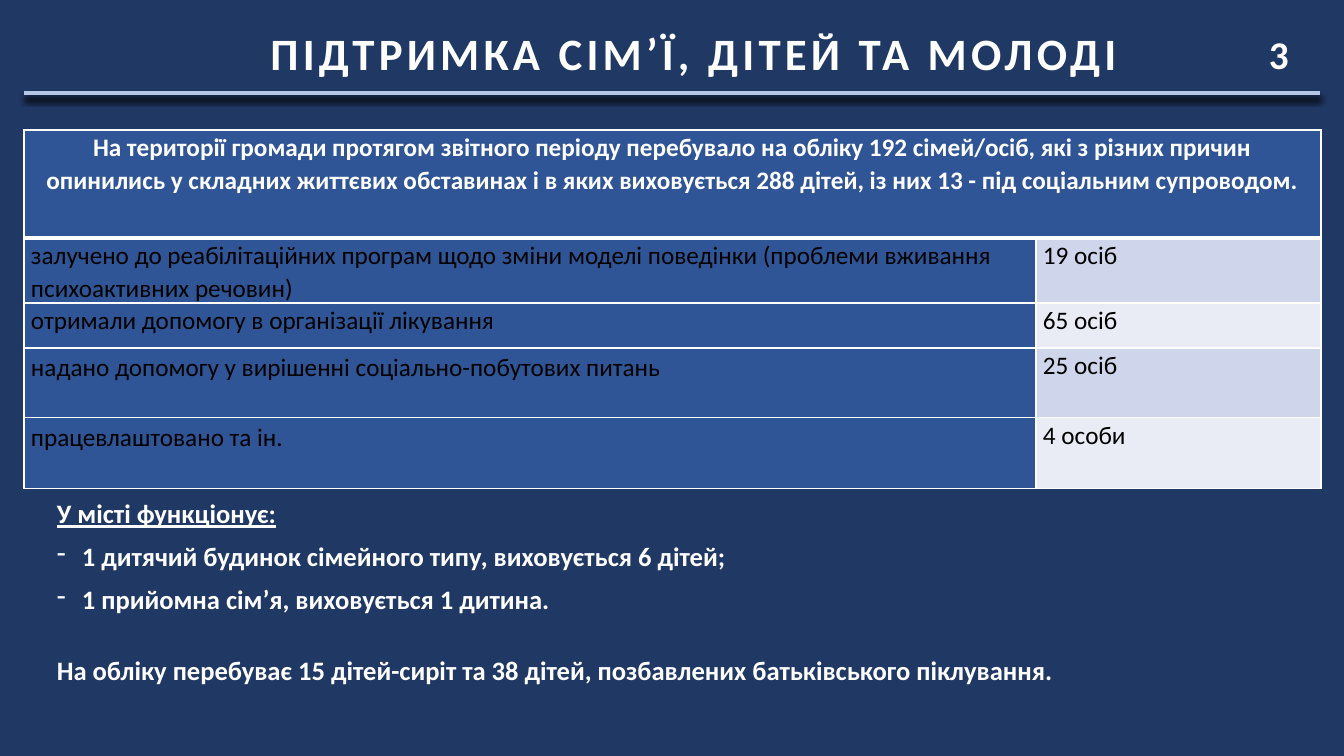
from lxml import etree
from pptx import Presentation
from pptx.dml.color import RGBColor
from pptx.enum.shapes import MSO_CONNECTOR
from pptx.enum.text import MSO_ANCHOR, MSO_AUTO_SIZE, PP_ALIGN
from pptx.oxml import parse_xml
from pptx.oxml.ns import nsdecls, qn
from pptx.util import Emu, Pt

NAVY = RGBColor(0x20, 0x38, 0x64)
BLUE = RGBColor(0x2F, 0x55, 0x97)
PALE_BLUE = RGBColor(0xB4, 0xC7, 0xE7)
BAND_DARK = RGBColor(0xCF, 0xD5, 0xEA)
BAND_LIGHT = RGBColor(0xE9, 0xEB, 0xF5)
WHITE = RGBColor(0xFF, 0xFF, 0xFF)
BLACK = RGBColor(0, 0, 0)

TITLE = "ПІДТРИМКА СІМ’Ї, ДІТЕЙ ТА МОЛОДІ"
SUMMARY = (
    "На території громади протягом звітного періоду перебувало на обліку 192 сімей/осіб, "
    "які з різних причин опинились у складних життєвих обставинах і в яких виховується "
    "288 дітей, із них 13 - під соціальним супроводом."
)
SUPPORT = [
    ("залучено до реабілітаційних програм щодо зміни моделі поведінки "
     "(проблеми вживання психоактивних речовин)", "19 осіб", 1.07),
    ("отримали допомогу в організації лікування", "65 осіб", 1.07),
    ("надано допомогу у вирішенні соціально-побутових питань", "25 осіб", 1.15),
    ("працевлаштовано та ін.", "4 особи", 1.15),
]
ROW_HEIGHTS = [108, 65, 45, 70, 71]
AMOUNT_WIDTH = 285


def px(length):
    """Turn whole pixels into EMU."""
    return Emu(round(length * 914400 / 100.8))


def shadow_effects():
    """Make a soft black shadow that falls downwards."""
    return parse_xml(
        f'<a:effectLst {nsdecls("a")}><a:outerShdw blurRad="50800" dist="50800" dir="5400000">'
        '<a:srgbClr val="000000"/></a:outerShdw></a:effectLst>')


def write(paragraph, text, size=18, color=WHITE, bold=True, underline=False, align=PP_ALIGN.LEFT,
          line=1.0, before=0, after=0, bullet=None, tracking=0, shadow=False):
    """Fill a paragraph with one formatted run."""
    paragraph.alignment = align
    paragraph.line_spacing = line
    paragraph.space_before = Pt(before)
    paragraph.space_after = Pt(after)
    if bullet:
        properties = paragraph._p.get_or_add_pPr()
        properties.set("marL", str(px(25)))
        properties.set("indent", str(-px(25)))
        etree.SubElement(properties, qn("a:buChar")).set("char", bullet)
    run = paragraph.add_run()
    run.text = text
    font = run.font
    font.name, font.size, font.bold, font.underline = "Calibri", Pt(size), bold, underline
    font.color.rgb = color
    if tracking:
        run._r.get_or_add_rPr().set("spc", str(tracking * 100))
    if shadow:
        run._r.get_or_add_rPr().find(qn("a:solidFill")).addnext(shadow_effects())


def add_header(slide, left, top, width):
    """Place the title, the page number and the rule below them."""
    title = slide.shapes.title
    title.left, title.top, title.width, title.height = px(left + 22), px(top), px(width), px(70)
    title.text_frame.auto_size = MSO_AUTO_SIZE.NONE
    title.text_frame.vertical_anchor = MSO_ANCHOR.TOP
    write(title.text_frame.paragraphs[0], TITLE, size=32, align=PP_ALIGN.CENTER,
          tracking=3, shadow=True)

    number = slide.shapes.add_textbox(px(left + width - 61), px(top + 4), px(50), px(57))
    number.text_frame.word_wrap = True
    write(number.text_frame.paragraphs[0], "3", size=28)

    rule = slide.shapes.add_connector(
        MSO_CONNECTOR.STRAIGHT, px(left), px(top + 72), px(left + width), px(top + 72))
    rule.line.color.rgb, rule.line.width = PALE_BLUE, Pt(3)
    rule._element.spPr.append(shadow_effects())


def format_cell(cell, fill, top=1, bottom=1):
    """Give a cell its fill, margins and white borders."""
    cell.margin_left = cell.margin_right = px(7)
    cell.margin_top = cell.margin_bottom = 0
    cell.fill.solid()
    cell.fill.fore_color.rgb = fill
    properties = cell._tc.get_or_add_tcPr()
    for place, (side, points) in enumerate(zip("LRTB", (1, 1, top, bottom))):
        properties.insert(place, parse_xml(
            f'<a:ln{side} {nsdecls("a")} w="{Pt(points)}"><a:solidFill>'
            f'<a:srgbClr val="{WHITE}"/></a:solidFill></a:ln{side}>'))


def add_support_table(slide, left, top, width):
    """Place the table of support given to families."""
    table = slide.shapes.add_table(
        len(ROW_HEIGHTS), 2, px(left), px(top), px(width), px(sum(ROW_HEIGHTS))).table
    table.horz_banding = False
    table.columns[0].width, table.columns[1].width = px(width - AMOUNT_WIDTH), px(AMOUNT_WIDTH)
    for row, height in zip(table.rows, ROW_HEIGHTS):
        row.height = px(height)

    table.cell(0, 0).merge(table.cell(0, 1))
    for cell in table.rows[0].cells:
        format_cell(cell, BLUE, bottom=3)
    write(table.cell(0, 0).text_frame.paragraphs[0], SUMMARY, align=PP_ALIGN.CENTER,
          line=1.07, after=8)

    for index, (help_given, amount, spacing) in enumerate(SUPPORT, 1):
        band = BAND_DARK if index % 2 else BAND_LIGHT
        for column, (text, fill, line) in enumerate(
                [(help_given, BLUE, spacing), (amount, band, 1.07)]):
            cell = table.cell(index, column)
            format_cell(cell, fill, top=3 if index == 1 else 1)
            write(cell.text_frame.paragraphs[0], text, color=BLACK, bold=False,
                  line=line, after=8)


def add_care_notes(slide, left, top, width, height):
    """Place the notes on family homes and orphans."""
    frame = slide.shapes.add_textbox(px(left), px(top), px(width), px(height)).text_frame
    frame.word_wrap = True
    notes = [
        ("У місті функціонує:", dict(underline=True)),
        ("1 дитячий будинок сімейного типу, виховується 6 дітей;", dict(bullet="-", before=10)),
        ("1 прийомна сім’я, виховується 1 дитина.", dict(bullet="-", before=10)),
        ("На обліку перебуває 15 дітей-сиріт та 38 дітей, позбавлених батьківського піклування.",
         dict(before=30)),
    ]
    for index, (text, style) in enumerate(notes):
        paragraph = frame.add_paragraph() if index else frame.paragraphs[0]
        write(paragraph, text, size=19, line=0.9, **style)


def main():
    """Build the slide and save it."""
    deck = Presentation()
    deck.slide_width, deck.slide_height = px(1344), px(756)
    slide = deck.slides.add_slide(deck.slide_layouts[5])
    slide.background.fill.solid()
    slide.background.fill.fore_color.rgb = NAVY
    add_header(slide, 24, 21, 1296)
    add_support_table(slide, 24, 130, 1297)
    add_care_notes(slide, 47, 496, 1296, 235)
    deck.save("out.pptx")


if __name__ == "__main__":
    main()
